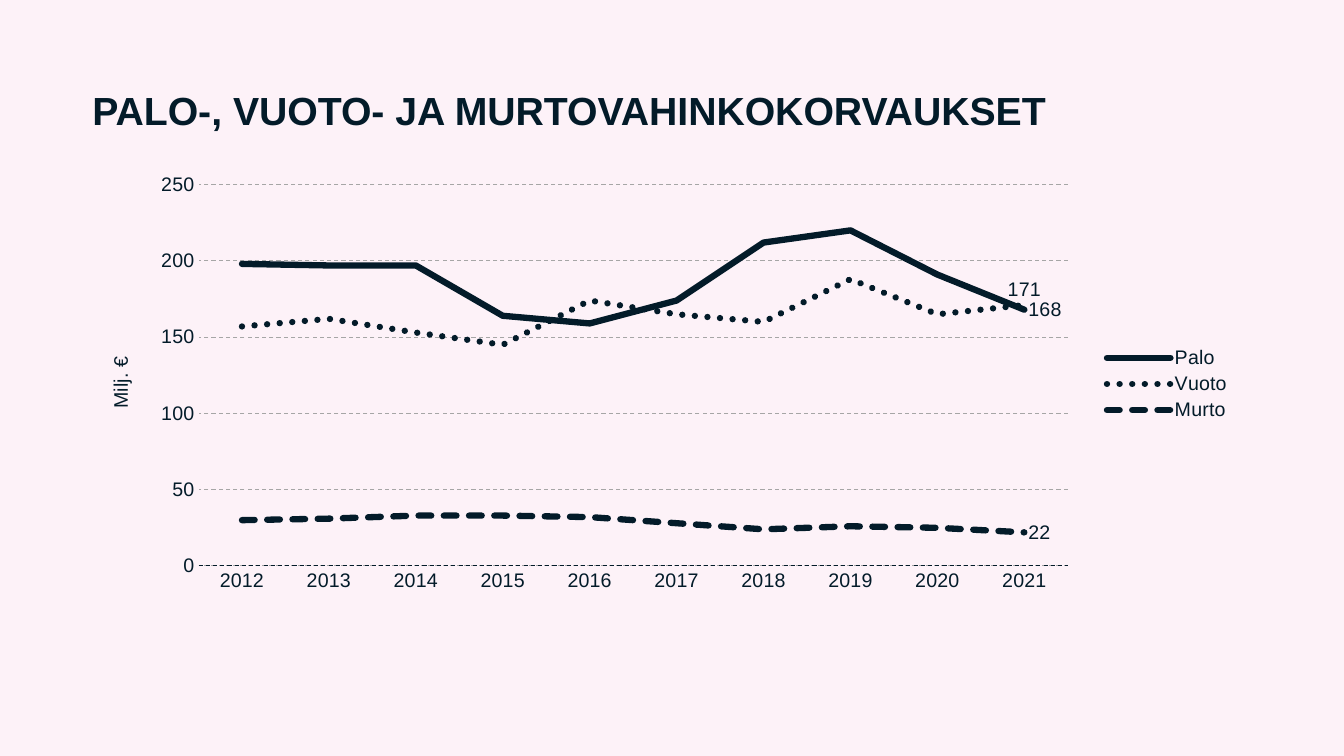
from dataclasses import dataclass
from typing import Optional

from lxml import etree
from pptx import Presentation
from pptx.chart.chart import Chart
from pptx.chart.data import CategoryChartData
from pptx.dml.color import RGBColor
from pptx.enum.chart import XL_CHART_TYPE, XL_LABEL_POSITION, XL_LEGEND_POSITION, XL_MARKER_STYLE, XL_TICK_MARK
from pptx.enum.dml import MSO_LINE
from pptx.enum.text import MSO_ANCHOR
from pptx.oxml import parse_xml
from pptx.oxml.ns import nsdecls, qn
from pptx.slide import Slide
from pptx.text.text import Font
from pptx.util import Pt

LINE_CHART = XL_CHART_TYPE.LINE
LABEL_RIGHT = XL_LABEL_POSITION.RIGHT
LABEL_ABOVE = XL_LABEL_POSITION.ABOVE
LEGEND_RIGHT = XL_LEGEND_POSITION.RIGHT
NO_MARKER = XL_MARKER_STYLE.NONE
NO_TICK = XL_TICK_MARK.NONE
DASH = MSO_LINE.DASH
DOTTED = MSO_LINE.ROUND_DOT
SHORT_DASH = MSO_LINE.SQUARE_DOT
MIDDLE = MSO_ANCHOR.MIDDLE

COLORS = {"background": "FDF2F8", "ink": "031B29", "grid": "A6A6A6"}
FONT_NAME = "Arial"
LEFT, WIDTH = 59, 828
YEARS = [str(year) for year in range(2012, 2022)]
PLOT_LAYOUT = {"x": 0.1, "y": 0.04, "w": 0.75, "h": 0.88}


@dataclass
class ClaimLine:
    name: str
    values: list[int]
    dash: Optional[MSO_LINE]
    label_position: XL_LABEL_POSITION


CLAIM_LINES = [
    ClaimLine("Palo", [198, 197, 197, 164, 159, 174, 212, 220, 191, 168], None, LABEL_RIGHT),
    ClaimLine("Vuoto", [157, 162, 153, 145, 174, 165, 160, 188, 165, 171], DOTTED, LABEL_ABOVE),
    ClaimLine("Murto", [30, 31, 33, 33, 32, 28, 24, 26, 25, 22], SHORT_DASH, LABEL_RIGHT),
]


def color(name: str) -> RGBColor:
    return RGBColor.from_string(COLORS[name])


def style_font(font: Font, size: float = 14, bold: bool = False) -> None:
    font.name = FONT_NAME
    font.size = Pt(size)
    font.bold = bold
    font.color.rgb = color("ink")


def add_title(slide: Slide, text: str) -> None:
    title = slide.shapes.add_textbox(Pt(LEFT), Pt(28), Pt(WIDTH), Pt(104.4))
    text_frame = title.text_frame
    text_frame.word_wrap = True
    text_frame.vertical_anchor = MIDDLE
    text_frame.text = text
    paragraph = text_frame.paragraphs[0]
    paragraph.line_spacing = 0.9
    style_font(paragraph.runs[0].font, 28, True)


def set_plot_layout(chart: Chart) -> None:
    plot_area = chart._chartSpace.chart.plotArea
    for layout in plot_area.findall(qn("c:layout")):
        plot_area.remove(layout)
    layout = parse_xml(f"<c:layout {nsdecls('c')}><c:manualLayout/></c:layout>")
    settings = {"layoutTarget": "inner", "xMode": "edge", "yMode": "edge", **PLOT_LAYOUT}
    for tag, value in settings.items():
        etree.SubElement(layout[0], qn(f"c:{tag}")).set("val", str(value))
    plot_area.insert(0, layout)


def style_axes(chart: Chart) -> None:
    category_axis, value_axis = chart.category_axis, chart.value_axis
    for axis in (category_axis, value_axis):
        axis.major_tick_mark = NO_TICK
        axis.minor_tick_mark = NO_TICK
        style_font(axis.tick_labels.font)
    value_axis.minimum_scale = 0
    value_axis.maximum_scale = 250
    value_axis.major_unit = 50
    value_axis.format.line.fill.background()
    value_axis.has_major_gridlines = True
    for line, name in (
        (category_axis.format.line, "ink"),
        (value_axis.major_gridlines.format.line, "grid"),
    ):
        line.color.rgb = color(name)
        line.width = Pt(0.75)
        line.dash_style = DASH
    text_frame = value_axis.axis_title.text_frame
    text_frame.text = "Milj. €"
    style_font(text_frame.paragraphs[0].runs[0].font)
    body = text_frame._txBody.find(qn("a:bodyPr"))
    body.set("rot", "-5400000")
    body.set("vert", "horz")


def style_claim_lines(chart: Chart) -> None:
    for series, claim in zip(chart.plots[0].series, CLAIM_LINES):
        series.smooth = False
        series.marker.style = NO_MARKER
        line = series.format.line
        line.color.rgb = color("ink")
        line.width = Pt(4.5)
        if claim.dash is not None:
            line.dash_style = claim.dash
        series._element.spPr.find(qn("a:ln")).set("cap", "rnd")
        label = series.points[len(YEARS) - 1].data_label
        style_font(label.font)
        label.position = claim.label_position


def add_claims_chart(slide: Slide) -> None:
    data = CategoryChartData()
    data.categories = YEARS
    for claim in CLAIM_LINES:
        data.add_series(claim.name, claim.values)
    chart = slide.shapes.add_chart(
        LINE_CHART, Pt(LEFT), Pt(119.5), Pt(WIDTH), Pt(309.6), data
    ).chart
    style_font(chart.font)
    chart.has_title = False
    chart.plots[0].vary_by_categories = False
    chart.has_legend = True
    chart.legend.position = LEGEND_RIGHT
    chart.legend.include_in_layout = False
    style_font(chart.legend.font)
    set_plot_layout(chart)
    style_axes(chart)
    style_claim_lines(chart)


def main() -> None:
    presentation = Presentation()
    presentation.slide_width = Pt(960)
    presentation.slide_height = Pt(540)
    slide = presentation.slides.add_slide(presentation.slide_layouts[6])
    slide.background.fill.solid()
    slide.background.fill.fore_color.rgb = color("background")
    add_title(slide, "PALO-, VUOTO- JA MURTOVAHINKOKORVAUKSET")
    add_claims_chart(slide)
    presentation.save("out.pptx")


if __name__ == "__main__":
    main()
